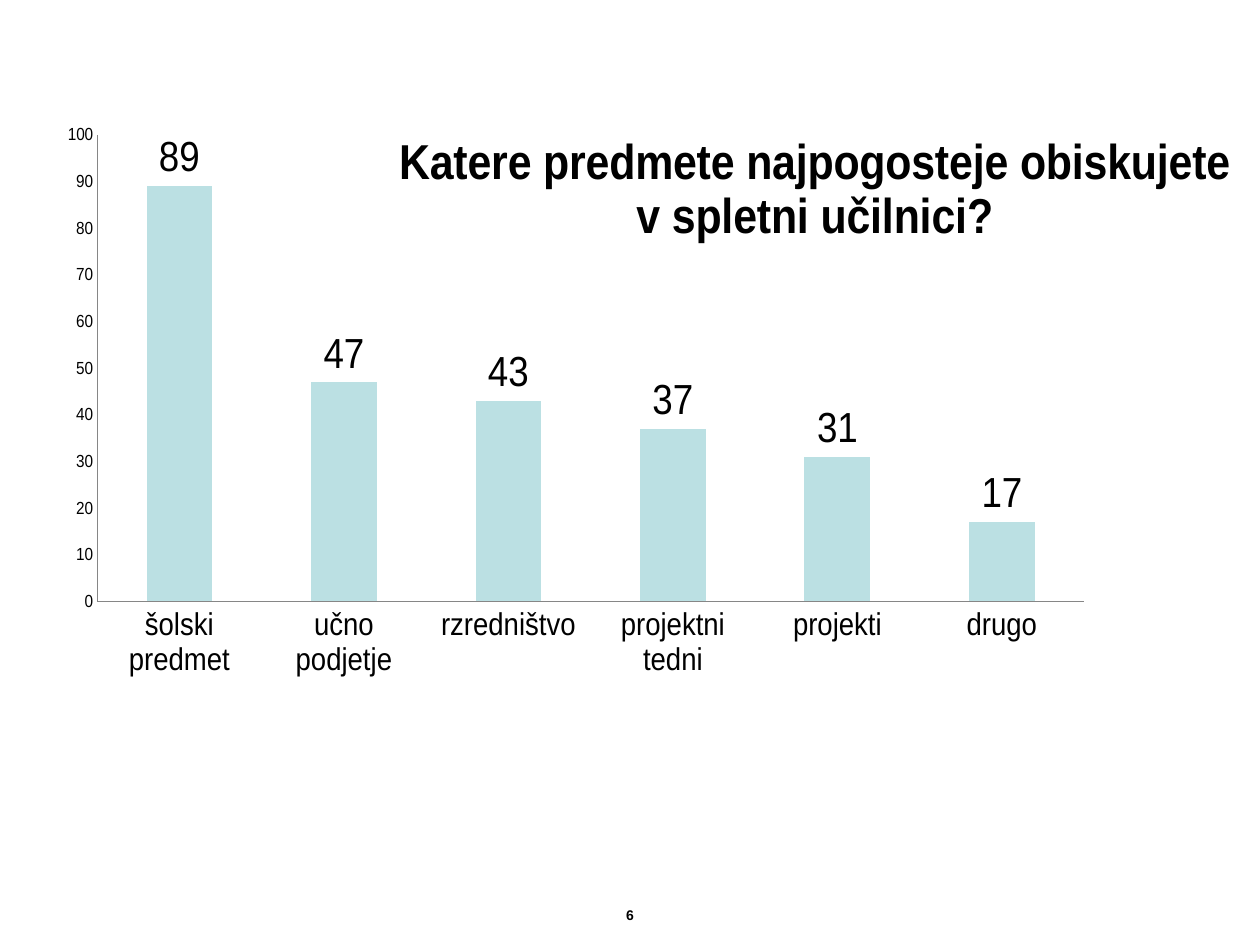
from lxml import etree
from pptx import Presentation
from pptx.chart.data import CategoryChartData
from pptx.dml.color import RGBColor
from pptx.enum import chart as charts, text
from pptx.oxml import parse_xml
from pptx.oxml.ns import nsdecls, qn
from pptx.util import Pt

COLORS = {"text": "000000", "bar": "BBE0E3", "axis": "868686"}
FONT = "Arial"
TITLE_LINES = ["Katere predmete najpogosteje obiskujete", "v spletni učilnici?"]
ANSWERS = [
    ("šolski predmet", 89),
    ("učno podjetje", 47),
    ("rzredništvo", 43),
    ("projektni tedni", 37),
    ("projekti", 31),
    ("drugo", 17),
]
PAGE_NUMBER = "6"
TITLE_LAYOUT = {"x": 0.35, "y": 0.02}
PLOT_LAYOUT = {"x": 0.068, "y": 0.027, "w": 0.932, "h": 0.665}


def color(name):
    return RGBColor.from_string(COLORS[name])


def format_font(font, size, bold=False):
    font.name = FONT
    font.size = Pt(size)
    font.bold = bold
    font.color.rgb = color("text")


def layout_xml(positions, inner=False):
    target = '<c:layoutTarget val="inner"/>' if inner else ""
    modes = "".join(f'<c:{key}Mode val="edge"/>' for key in ("x", "y"))
    values = "".join(f'<c:{key} val="{value}"/>' for key, value in positions.items())
    return parse_xml(
        f'<c:layout {nsdecls("c")}><c:manualLayout>{target}{modes}{values}'
        "</c:manualLayout></c:layout>"
    )


def set_layout(parent, layout, index):
    for old in parent.findall(qn("c:layout")):
        parent.remove(old)
    parent.insert(index, layout)


def add_answer_chart(slide):
    data = CategoryChartData()
    data.categories = [name for name, _ in ANSWERS]
    data.add_series("Series 1", [value for _, value in ANSWERS])
    chart = slide.shapes.add_chart(
        charts.XL_CHART_TYPE.COLUMN_CLUSTERED,
        Pt(14.4), Pt(66.24), Pt(691.92), Pt(401.04), data,
    ).chart
    format_font(chart.font, 10)
    chart.has_legend = False

    chart.has_title = True
    title_frame = chart.chart_title.text_frame
    for index, line in enumerate(TITLE_LINES):
        paragraph = title_frame.paragraphs[0] if index == 0 else title_frame.add_paragraph()
        format_font(paragraph.font, 28, True)
        run = paragraph.add_run()
        run.text = line
        format_font(run.font, 28, True)
    chart.chart_title.include_in_layout = False
    set_layout(chart.chart_title._element, layout_xml(TITLE_LAYOUT), 1)
    plot_area = chart._chartSpace.chart.plotArea
    set_layout(plot_area, layout_xml(PLOT_LAYOUT, True), 0)

    for axis, size in ((chart.category_axis, 18), (chart.value_axis, 10)):
        axis.has_major_gridlines = False
        axis.major_tick_mark = charts.XL_TICK_MARK.NONE
        axis.minor_tick_mark = charts.XL_TICK_MARK.NONE
        axis.format.line.color.rgb = color("axis")
        axis.format.line.width = Pt(0.75)
        format_font(axis.tick_labels.font, size)
    chart.value_axis.minimum_scale = 0
    chart.value_axis.maximum_scale = 100
    chart.value_axis.major_unit = 10

    plot = chart.plots[0]
    plot.gap_width = 150
    plot.vary_by_categories = False
    series = plot.series[0]
    series.format.fill.solid()
    series.format.fill.fore_color.rgb = color("bar")
    labels = series.data_labels
    labels.show_value = True
    labels.position = charts.XL_LABEL_POSITION.OUTSIDE_END
    format_font(labels.font, 24)


def add_page_number(slide):
    frame = slide.shapes.add_textbox(Pt(36.72), Pt(506.16), Pt(646.56), Pt(33.84)).text_frame
    frame.word_wrap = True
    frame.vertical_anchor = text.MSO_ANCHOR.MIDDLE
    paragraph = frame.paragraphs[0]
    paragraph.alignment = text.PP_ALIGN.CENTER
    run = paragraph.add_run()
    run.text = PAGE_NUMBER
    format_font(run.font, 8, True)


def main():
    presentation = Presentation()
    presentation.slide_width = Pt(720)
    presentation.slide_height = Pt(540)
    slide = presentation.slides.add_slide(presentation.slide_layouts[6])
    add_page_number(slide)
    add_answer_chart(slide)
    presentation.save("out.pptx")


if __name__ == "__main__":
    main()
